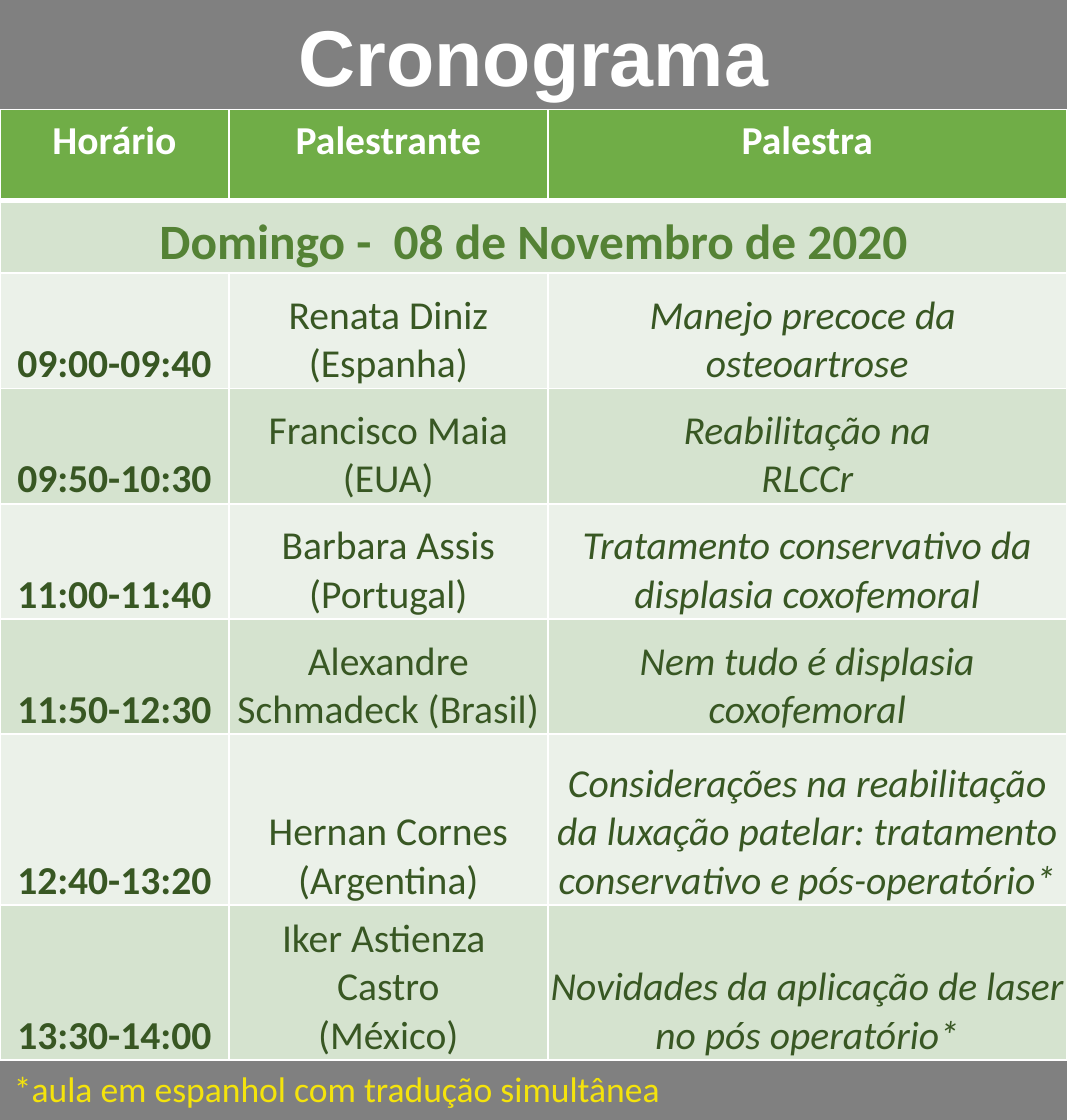
from lxml.etree import SubElement
from pptx import Presentation
from pptx.dml.color import RGBColor
from pptx.enum.text import MSO_ANCHOR, MSO_AUTO_SIZE, PP_ALIGN
from pptx.oxml.ns import qn
from pptx.util import Inches, Pt

TITLE = "Cronograma"
HEADER = ("Horário", "Palestrante", "Palestra")
DAY = "Domingo -  08 de Novembro de 2020"
TALKS = [
    ("09:00-09:40", "Renata Diniz\n(Espanha)", "Manejo precoce da  osteoartrose"),
    ("09:50-10:30", "Francisco Maia (EUA)", "Reabilitação na\nRLCCr"),
    ("11:00-11:40", "Barbara Assis\n(Portugal)",
     "Tratamento conservativo da displasia coxofemoral"),
    ("11:50-12:30", "Alexandre Schmadeck (Brasil)", "Nem tudo é displasia coxofemoral"),
    ("12:40-13:20", "Hernan Cornes (Argentina)",
     "Considerações na reabilitação da luxação patelar: "
     "tratamento conservativo e pós-operatório*"),
    ("13:30-14:00", "Iker Astienza  Castro\n(México)",
     "Novidades da aplicação de laser no pós operatório*"),
]
NOTE = "*aula em espanhol com tradução simultânea"

WIDTH, HEIGHT = 7.5, 7.87
TITLE_H, NOTE_H = 0.77, 0.4
COLS = (1.61, 2.24, 3.65)
ROWS = (0.64, 0.51) + (0.81,) * 4 + (1.2, 1.09)
GRAY, GREEN, BANDS = "808080", "70AD47", ("EBF1E9", "D5E3CF")

HEAD_FONT = dict(name="Calibri", size=Pt(20), bold=True, italic=False, color="FFFFFF")
DAY_FONT = HEAD_FONT | dict(size=Pt(25), color="548235")
TIME_FONT = HEAD_FONT | dict(color="385723")
SPEAKER_FONT = TIME_FONT | dict(bold=False)
TALK_FONT = SPEAKER_FONT | dict(italic=True)
TITLE_FONT = HEAD_FONT | dict(name="Arial", size=Pt(40))
NOTE_FONT = SPEAKER_FONT | dict(size=Pt(18), color="F4E30C")
TIGHT = dict(margin_left=Inches(0.01), margin_right=Inches(0.01),
             margin_top=Inches(0.01), margin_bottom=0,
             vertical_anchor=MSO_ANCHOR.BOTTOM)


def paint(fill, color):
    fill.solid()
    fill.fore_color.rgb = RGBColor.from_string(color)


def write(tf, text, font, align=PP_ALIGN.CENTER):
    tf.text = text
    for p in tf.paragraphs:
        p.alignment = align
        for r in p.runs:
            for key, value in font.items():
                if key == "color":
                    r.font.color.rgb = RGBColor.from_string(value)
                else:
                    setattr(r.font, key, value)


def border(cell, bottom):
    tc_pr = cell._tc.get_or_add_tcPr()
    for side, width in zip("LRTB", (1, 1, 1, bottom)):
        ln = SubElement(tc_pr, qn(f"a:ln{side}"), w=str(Pt(width)))
        SubElement(SubElement(ln, qn("a:solidFill")), qn("a:srgbClr"), val="FFFFFF")


def fill_cell(cell, text, font, color, bottom=1, layout=TIGHT):
    for key, value in layout.items():
        setattr(cell, key, value)
    border(cell, bottom)
    paint(cell.fill, color)
    if text:
        write(cell.text_frame, text, font)


def place(sp, left, top, width, height):
    sp.left, sp.top, sp.width, sp.height = map(Inches, (left, top, width, height))


def main():
    """Build the schedule slide: title band, table of talks and footnote."""
    prs = Presentation()
    prs.slide_width, prs.slide_height = Inches(WIDTH), Inches(HEIGHT)
    slide = prs.slides.add_slide(prs.slide_layouts[5])
    paint(slide.background.fill, GRAY)

    title = slide.shapes.title
    place(title, 0, 0, WIDTH, TITLE_H)
    paint(title.fill, GRAY)
    title.text_frame.auto_size = MSO_AUTO_SIZE.NONE
    title.text_frame.vertical_anchor = MSO_ANCHOR.MIDDLE
    write(title.text_frame, TITLE, TITLE_FONT)

    box = (0, TITLE_H, WIDTH, sum(ROWS))
    table = slide.shapes.add_table(len(ROWS), len(COLS), *map(Inches, box)).table
    for col, width in zip(table.columns, COLS):
        col.width = Inches(width)
    for row, height in zip(table.rows, ROWS):
        row.height = Inches(height)

    for c, text in enumerate(HEADER):
        fill_cell(table.cell(0, c), text, HEAD_FONT, GREEN, bottom=3, layout={})
        fill_cell(table.cell(1, c), "" if c else DAY, DAY_FONT, BANDS[1])
    table.cell(1, 0).merge(table.cell(1, len(COLS) - 1))
    for i, talk in enumerate(TALKS):
        for c, (text, font) in enumerate(zip(talk, (TIME_FONT, SPEAKER_FONT, TALK_FONT))):
            fill_cell(table.cell(i + 2, c), text, font, BANDS[i % 2])

    note = slide.shapes.add_textbox(0, 0, 0, 0)
    place(note, 0, TITLE_H + sum(ROWS), WIDTH * 0.64, NOTE_H)
    note.text_frame.word_wrap = False
    write(note.text_frame, NOTE, NOTE_FONT, PP_ALIGN.LEFT)

    prs.save("out.pptx")


if __name__ == "__main__":
    main()
